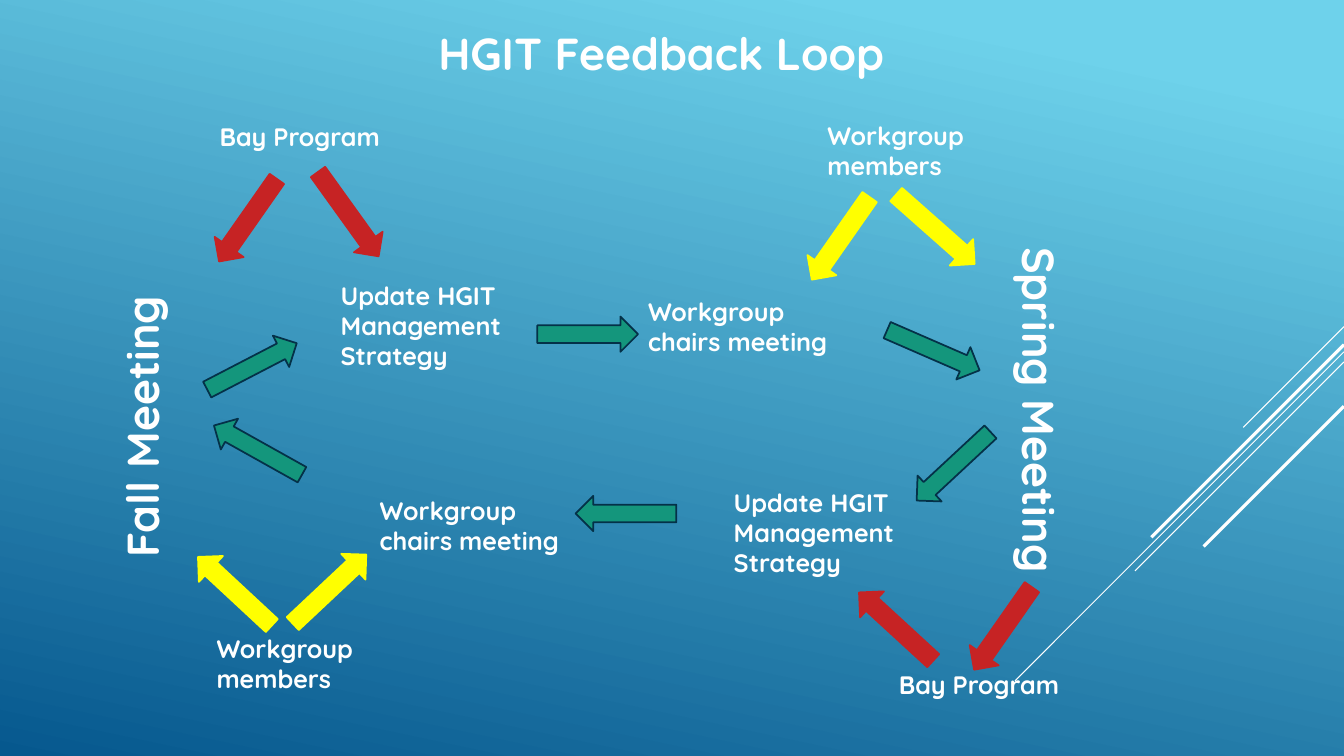
"""Build the HGIT feedback loop slide."""
import dataclasses
import typing

import lxml.etree
import pptx
import pptx.dml.color
import pptx.enum.shapes
import pptx.enum.text
import pptx.oxml.ns
import pptx.util

Pt = pptx.util.Pt
WIDTH, HEIGHT = 960, 540
COLORS = {
    "sky": "6ED2EB",
    "deep": "06588E",
    "white": "FFFFFF",
    "yellow": "FFFF00",
    "red": "C62324",
    "green": "14967C",
    "navy": "043148",
}
FONT = {"name": "Quicksand", "bold": True}
FRAME = {
    "word_wrap": True,
    "auto_size": pptx.enum.text.MSO_AUTO_SIZE.SHAPE_TO_FIT_TEXT,
}
UPDATE = "Update HGIT Management Strategy"
CHAIRS = "Workgroup chairs meeting"
MEMBERS = "Workgroup members"
PROGRAM = "Bay Program"


@dataclasses.dataclass
class Streak:
    top: float
    run: float
    weight: float = 0.75


@dataclasses.dataclass
class Label:
    text: str
    left: float
    top: float
    width: float
    height: float
    size: float = 18
    turn: float = 0
    align: typing.Any = pptx.enum.text.PP_ALIGN.LEFT


@dataclasses.dataclass
class Arrow:
    left: float
    top: float
    turn: float
    fill: str
    edge: str
    width: float = 72
    height: float = 25.2


STREAKS = [
    Streak(233.3, 72),
    Streak(251.3, 235),
    Streak(258.5, 149.3),
    Streak(246.2, 137.6, 2.25),
    Streak(290.2, 100.2, 2.25),
]
LABELS = [
    Label(" HGIT Feedback Loop", 147.6, 15.1, 640.8, 46, 32,
          align=pptx.enum.text.PP_ALIGN.CENTER),
    Label("Fall Meeting", -21.6, 259.2, 246.2, 46, 32, 270),
    Label("Spring Meeting", 612.7, 276.5, 260, 46, 32, 90),
    Label("Update HGIT\nManagement Strategy", 236.2, 196.6, 185.8, 72.7),
    Label(UPDATE, 517, 344.2, 200.2, 72.7),
    Label(CHAIRS, 455.8, 208.1, 144.7, 51),
    Label(CHAIRS, 264.2, 350, 161.3, 51),
    Label(MEMBERS, 583.9, 82.1, 158.4, 51),
    Label(MEMBERS, 147.6, 448.6, 161.3, 51),
    Label(PROGRAM, 147.6 + 2.2, 82.8, 143.3, 28.8),
    Label(PROGRAM, 635, 474.5, 136.1, 28.8),
]
ARROWS = [
    Arrow(564.5, 157.7, 125, "yellow", "yellow"),
    Arrow(630.7, 151.2, 41.5, "yellow", "yellow", 74.9),
    Arrow(131.8, 409.7, 222.9, "yellow", "yellow"),
    Arrow(199.4, 408.2, 316.8, "yellow", "yellow"),
    Arrow(141.1, 144.7, 125, "red", "red"),
    Arrow(211.7, 140.4, 54.3, "red", "red", 74.2),
    Arrow(680.4, 436.3, 125, "red", "red"),
    Arrow(604.1, 434.9, 222.6, "red", "red"),
    Arrow(383.8, 226.1, 0, "green", "navy"),
    Arrow(630.7, 237.6, 23.5, "green", "navy"),
    Arrow(645.1, 320.4, 137.1, "green", "navy"),
    Arrow(411.1, 354.2, 180, "green", "navy"),
    Arrow(148.3, 308.9, 209.2, "green", "navy"),
    Arrow(144, 249.1, 332.6, "green", "navy"),
]


def shade(name: str) -> pptx.dml.color.RGBColor:
    """Return the named colour."""
    return pptx.dml.color.RGBColor.from_string(COLORS[name])


def apply(target: typing.Any, values: dict) -> None:
    """Set each format value on the target."""
    for key, value in values.items():
        setattr(target, key, value)


def paint(slide: typing.Any) -> None:
    """Fill the background with the blue gradient."""
    fill = slide.background.fill
    fill.gradient()
    fill.gradient_angle = 360 - 102
    stops = zip(fill.gradient_stops, ("sky", "deep"), (0.1, 1))
    for stop, name, place in stops:
        stop.color.rgb = shade(name)
        stop.position = place


def draw_streak(slide: typing.Any, streak: Streak) -> None:
    """Draw a diagonal line down from the right edge."""
    line = slide.shapes.add_connector(
        pptx.enum.shapes.MSO_CONNECTOR.STRAIGHT,
        Pt(WIDTH), Pt(streak.top),
        Pt(WIDTH - streak.run), Pt(streak.top + streak.run))
    line.line.color.rgb = shade("white")
    line.line.width = Pt(streak.weight)
    lxml.etree.SubElement(line._element.spPr,
                          pptx.oxml.ns.qn("a:effectLst"))


def draw_label(slide: typing.Any, label: Label) -> None:
    """Draw a text box in bold white."""
    box = slide.shapes.add_textbox(Pt(label.left), Pt(label.top),
                                   Pt(label.width), Pt(label.height))
    box.rotation = label.turn
    frame = box.text_frame
    apply(frame, FRAME)
    frame.text = label.text
    for para in frame.paragraphs:
        para.alignment = label.align
        for run in para.runs:
            apply(run.font, FONT | {"size": Pt(label.size)})
            run.font.color.rgb = shade("white")


def draw_arrow(slide: typing.Any, arrow: Arrow) -> None:
    """Draw a turned block arrow."""
    shape = slide.shapes.add_shape(
        pptx.enum.shapes.MSO_SHAPE.RIGHT_ARROW,
        Pt(arrow.left), Pt(arrow.top), Pt(arrow.width), Pt(arrow.height))
    shape.rotation = arrow.turn
    shape.shadow.inherit = False
    shape.fill.solid()
    shape.fill.fore_color.rgb = shade(arrow.fill)
    shape.line.color.rgb = shade(arrow.edge)
    shape.line.width = Pt(1.25)


def main() -> None:
    """Build and save the slide."""
    deck = pptx.Presentation()
    apply(deck, {"slide_width": Pt(WIDTH), "slide_height": Pt(HEIGHT)})
    slide = deck.slides.add_slide(deck.slide_layouts[6])
    paint(slide)
    for streak in STREAKS:
        draw_streak(slide, streak)
    for label in LABELS:
        draw_label(slide, label)
    for arrow in ARROWS:
        draw_arrow(slide, arrow)
    deck.save("out.pptx")


if __name__ == "__main__":
    main()
